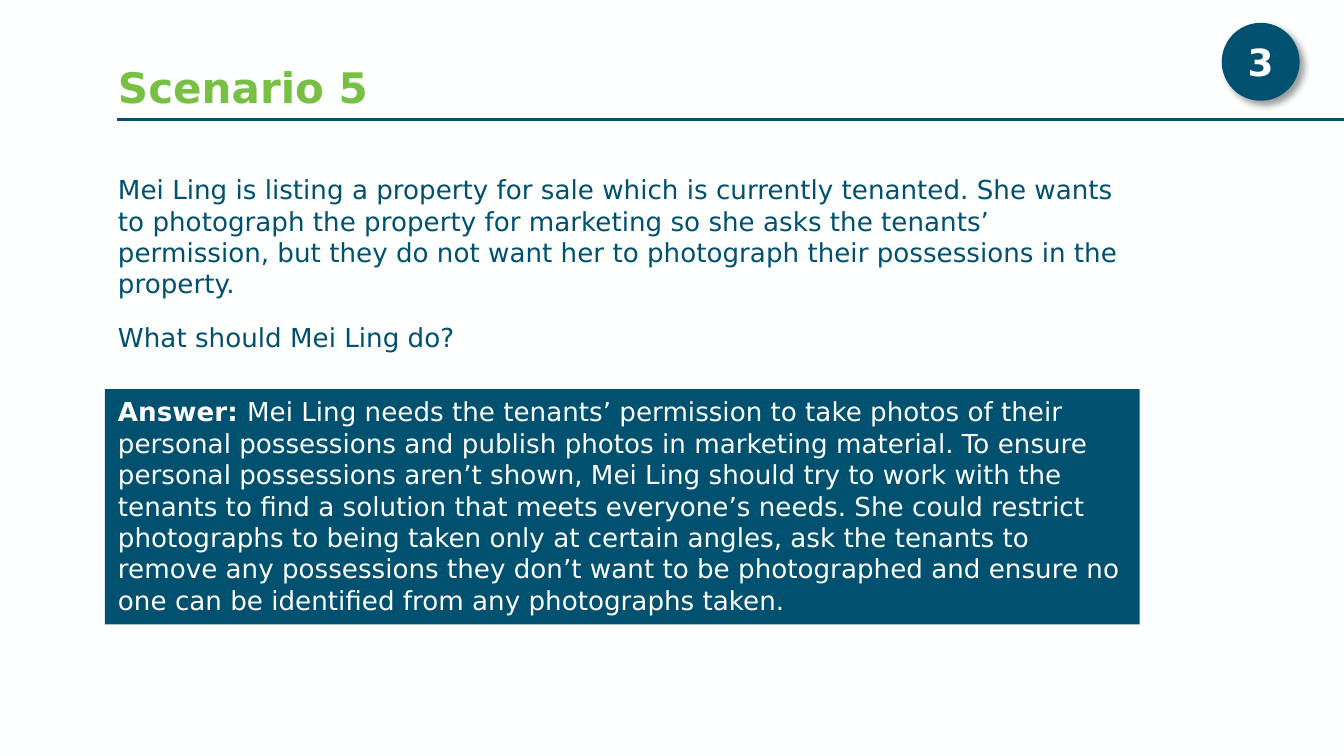
from lxml.etree import SubElement
from pptx import Presentation
from pptx.dml.color import RGBColor
from pptx.enum.shapes import MSO_CONNECTOR as Connector, MSO_SHAPE as Shape
from pptx.enum.text import MSO_ANCHOR as Anchor, PP_ALIGN as Align
from pptx.oxml.ns import qn
from pptx.util import Inches, Pt

COLUMNS, ROWS = 100, 56.25
LEFT, WIDTH = 7.8, 77
RULE_ROW = 8.87

QUESTION = [
    "Mei Ling is listing a property for sale which is currently tenanted. She wants to "
    "photograph the property for marketing so she asks the tenants’ permission, but they "
    "do not want her to photograph their possessions in the property.",
    "What should Mei Ling do?",
]
ANSWER = (
    "Mei Ling needs the tenants’ permission to take photos of their personal possessions "
    "and publish photos in marketing material. To ensure personal possessions aren’t shown, "
    "Mei Ling should try to work with the tenants to find a solution that meets everyone’s "
    "needs. She could restrict photographs to being taken only at certain angles, ask the "
    "tenants to remove any possessions they don’t want to be photographed and ensure no one "
    "can be identified from any photographs taken."
)


def color(value):
    return RGBColor.from_string(value)


def grid(*cells):
    return [Inches(cell / 10) for cell in cells]


class ScenarioPage:
    font = "DejaVu Sans"
    navy, green, white = "005070", "77C043", "FEFFFF"

    def __init__(self, deck):
        self.page = deck.slides.add_slide(deck.slide_layouts[6])
        fill = self.page.background.fill
        fill.solid()
        fill.fore_color.rgb = color(self.white)

    def style(self, span, size, shade, bold=False):
        font = span.font
        font.name, font.size, font.bold = self.font, Pt(size), bold
        font.color.rgb = color(shade)

    def rule(self, start, end, row):
        line = self.page.shapes.add_connector(Connector.STRAIGHT, *grid(start, row, end, row))
        line.line.color.rgb = color(self.navy)
        line.line.width = Pt(1.75)
        SubElement(line._element.spPr, qn("a:effectLst"))

    def text(self, area, paragraphs, size, shade, bold=False, anchor=Anchor.TOP, spacing=None):
        box = self.page.shapes.add_textbox(*grid(*area))
        frame = box.text_frame
        frame.word_wrap = True
        frame.vertical_anchor = anchor
        frame.text = "\n".join(paragraphs)
        for index, para in enumerate(frame.paragraphs):
            para.line_spacing = spacing
            if index:
                para.space_before = Pt(12)
            self.style(para.runs[0], size, shade, bold)

    def panel(self, kind, area, spans, size, align, anchor):
        shape = self.page.shapes.add_shape(kind, *grid(*area))
        shape.shadow.inherit = False
        shape.fill.solid()
        shape.fill.fore_color.rgb = color(self.navy)
        shape.line.fill.background()
        frame = shape.text_frame
        frame.word_wrap = True
        frame.vertical_anchor = anchor
        para = frame.paragraphs[0]
        para.alignment = align
        for words, bold in spans:
            span = para.add_run()
            span.text = words
            self.style(span, size, self.white, bold)
        return shape

    def badge(self, area, label):
        circle = self.panel(Shape.OVAL, area, [(label, True)], 20, Align.CENTER, Anchor.MIDDLE)
        frame = circle.text_frame
        frame.margin_left = frame.margin_right = 0
        effects = circle._element.spPr.find(qn("a:effectLst"))
        shadow = SubElement(effects, qn("a:outerShdw"), blurRad=str(Pt(4)), dist=str(Pt(3)),
                            dir=str(45 * 60000), algn="tl", rotWithShape="0")
        black = SubElement(shadow, qn("a:srgbClr"), val="000000")
        SubElement(black, qn("a:alpha"), val="40000")


def main():
    deck = Presentation()
    deck.slide_width, deck.slide_height = grid(COLUMNS, ROWS)
    page = ScenarioPage(deck)
    page.rule(8.67, COLUMNS, RULE_ROW)
    page.text((LEFT, 12.42, WIDTH, 15.7), QUESTION, 14, page.navy)
    page.text((LEFT, 0, 85.3, RULE_ROW), ["Scenario 5"], 22.5, page.green,
              bold=True, anchor=Anchor.BOTTOM, spacing=0.9)
    page.badge((90.9, 1.7, 5.8, 5.8), "3")
    page.panel(Shape.RECTANGLE, (LEFT, 28.96, WIDTH, 17.5),
               [("Answer: ", True), (ANSWER, False)], 14, Align.LEFT, Anchor.TOP)
    deck.save("out.pptx")


if __name__ == "__main__":
    main()
